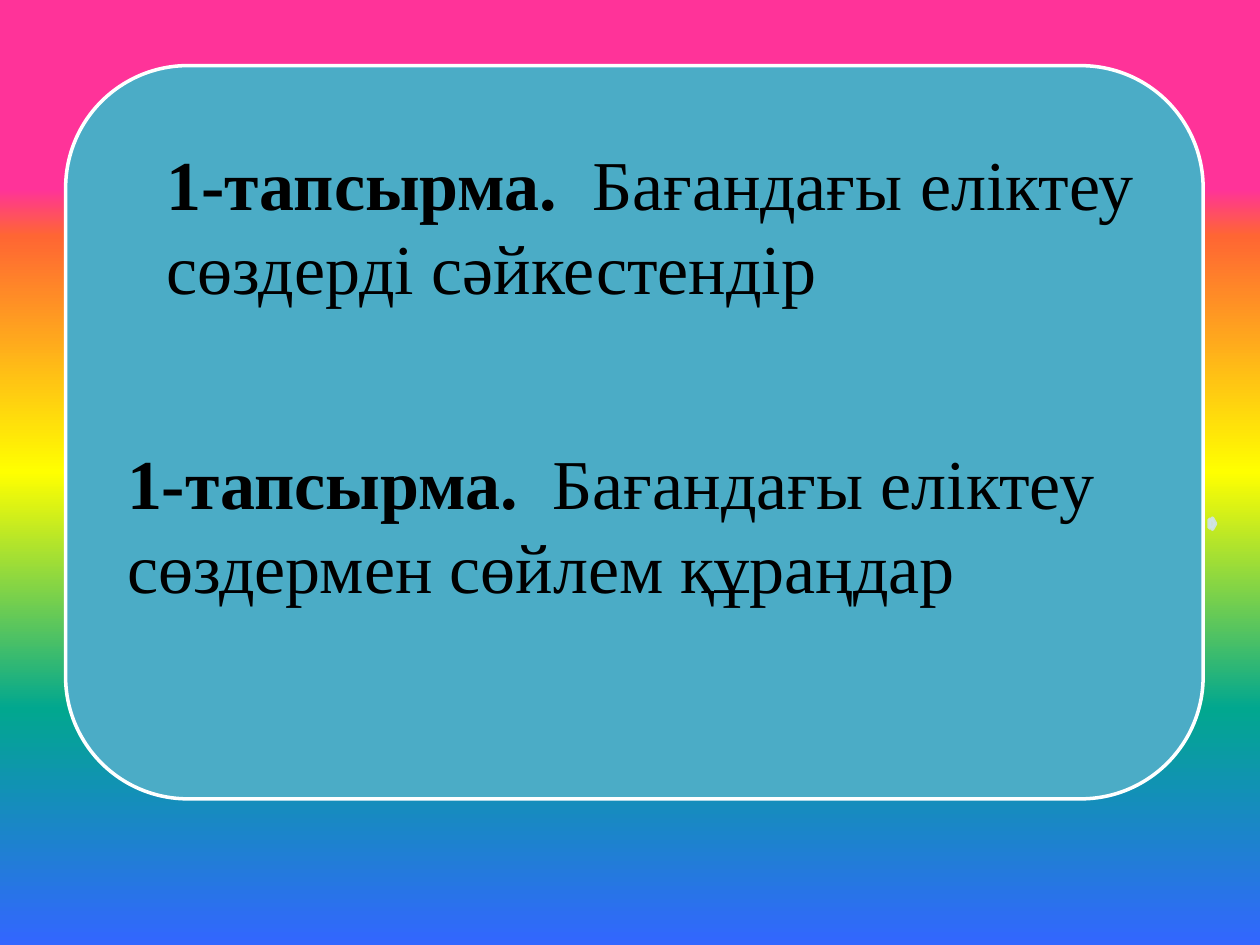
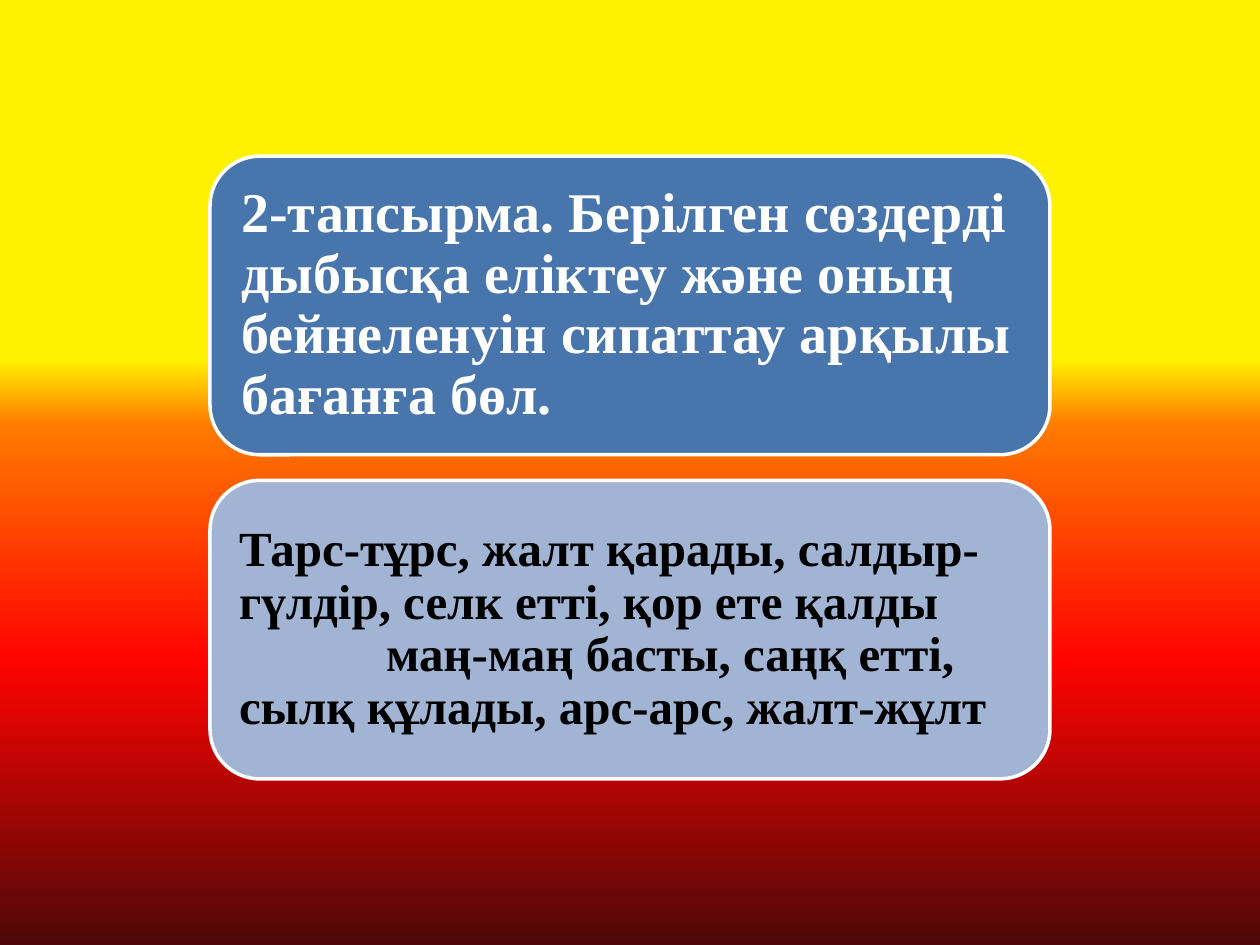
"""Builds two task slides with rounded panels on banded gradients."""
from dataclasses import dataclass

from lxml.etree import SubElement
from pptx import Presentation
from pptx.dml.color import RGBColor
from pptx.enum.shapes import MSO_SHAPE
from pptx.enum.text import MSO_ANCHOR, PP_ALIGN
from pptx.oxml.ns import qn
from pptx.slide import Slide
from pptx.util import Pt

FONT = "Times New Roman"
HUES = {
    "pink": "FF3399", "coral": "FF6633", "lemon": "FFFF00", "green": "01A78F",
    "blue": "3366FF", "gold": "FFF200", "amber": "FF7A00", "red": "FF0300",
    "wine": "4D0808", "teal": "4BACC6", "steel": "4875AC", "mist": "A2B4D4",
    "pale": "D0E3EA", "white": "FFFFFF", "black": "000000",
}


@dataclass
class Box:
    left: float
    top: float
    width: float
    height: float

    def shrink(self, gap: float) -> "Box":
        return Box(self.left + gap, self.top + gap,
                   self.width - 2 * gap, self.height - 2 * gap)

    def span(self) -> list[Pt]:
        return [Pt(side) for side in (self.left, self.top, self.width, self.height)]


@dataclass
class Run:
    text: str
    bold: bool = True
    extra: float = 0


@dataclass
class Line:
    runs: list[Run]
    indent: float = 0


@dataclass
class Style:
    size: float
    hue: str
    pad: tuple[float, float] = (7.2, 3.6)
    wrap: bool = False
    space: float = 1.0


@dataclass
class Card:
    hue: str
    style: Style
    lines: list[Line]


def color(hue: str) -> RGBColor:
    return RGBColor.from_string(HUES[hue])


def paint(slide: Slide, stops: list[tuple[int, str]]) -> None:
    slide.background.fill.gradient()
    grad = next(slide.element.iter(qn("a:gradFill")))
    for part in list(grad):
        grad.remove(part)
    bands = SubElement(grad, qn("a:gsLst"))
    for place, hue in stops:
        stop = SubElement(bands, qn("a:gs"), pos=str(place * 1000))
        SubElement(stop, qn("a:srgbClr"), val=HUES[hue])
    SubElement(grad, qn("a:lin"), ang="5400000", scaled="0")


def panel(slide: Slide, box: Box, hue: str) -> None:
    shape = slide.shapes.add_shape(MSO_SHAPE.ROUNDED_RECTANGLE, *box.span())
    shape.shadow.inherit = False
    shape.fill.solid()
    shape.fill.fore_color.rgb = color(hue)
    shape.line.color.rgb = color("white")
    shape.line.width = Pt(2)


def arrow(slide: Slide, box: Box) -> None:
    shape = slide.shapes.add_shape(MSO_SHAPE.RIGHT_ARROW, *box.span())
    shape.shadow.inherit = False
    shape.adjustments[0] = 0.75
    shape.adjustments[1] = 0.5
    shape.fill.solid()
    shape.fill.fore_color.rgb = color("pale")
    shape.line.color.rgb = color("pale")
    shape.line.width = Pt(2)
    for tint in shape.element.spPr.iter(qn("a:srgbClr")):
        SubElement(tint, qn("a:alpha"), val="90000")


def write(slide: Slide, box: Box, style: Style, lines: list[Line]) -> None:
    frame = slide.shapes.add_textbox(*box.span()).text_frame
    frame.word_wrap = style.wrap
    frame.vertical_anchor = MSO_ANCHOR.MIDDLE if style.wrap else MSO_ANCHOR.TOP
    frame.margin_left = frame.margin_right = Pt(style.pad[0])
    frame.margin_top = frame.margin_bottom = Pt(style.pad[1])
    for index, line in enumerate(lines):
        para = frame.add_paragraph() if index else frame.paragraphs[0]
        para.alignment = PP_ALIGN.LEFT
        para.line_spacing = style.space
        if line.indent:
            para.element.get_or_add_pPr().set("indent", str(Pt(line.indent))) if hasattr(para, "element") else \
                para._p.get_or_add_pPr().set("indent", str(Pt(line.indent)))
        for item in line.runs:
            run = para.add_run()
            run.text = item.text
            run.font.name = FONT
            run.font.size = Pt(style.size)
            run.font.bold = item.bold
            run.font.color.rgb = color(style.hue)
            if item.extra:
                run.font._element.set("spc", str(int(item.extra * 100)))


def match(slide: Slide) -> None:
    paint(slide, [(20, "pink"), (25, "coral"), (50, "lemon"),
                  (75, "green"), (100, "blue")])
    arrow(slide, Box(691, 296, 3.6, 6.5))
    panel(slide, Box(37.5, 37.5, 650, 419), "teal")
    style = Style(40, "black")
    tasks = [(88, 77, "сөздерді сәйкестендір"),
             (65.5, 247.5, "сөздермен сөйлем құраңдар")]
    for left, top, close in tasks:
        head = [Run("1-тапсырма."), Run(" ", extra=10),
                Run("Бағандағы еліктеу", False)]
        write(slide, Box(left, top, 583, 104.5), style,
              [Line(head), Line([Run(close, False)])])


def sort(slide: Slide) -> None:
    paint(slide, [(38, "gold"), (45, "amber"), (70, "red"), (100, "wine")])
    cards = [
        Card("steel", Style(32, "white", (9.6, 9.6), True, 0.9), [
            Line([Run("2-тапсырма. Берілген сөздерді дыбысқа еліктеу және оның "
                      "бейнеленуін сипаттау арқылы бағанға бөл.")])]),
        Card("mist", Style(28, "black", (8.4, 8.4), True, 0.9), [
            Line([Run("Тарс-тұрс, жалт қарады, салдыр-гүлдір, селк етті, "
                      "қор ете қалды")]),
            Line([Run("маң-маң басты, саңқ етті, сылқ құлады, арс-арс, "
                      "жалт-жұлт")], 84)]),
    ]
    for index, card in enumerate(cards):
        box = Box(120, 89.3 + 185.2 * index, 480, 170.6)
        panel(slide, box, card.hue)
        write(slide, box.shrink(8.2), card.style, card.lines)


def main() -> None:
    deck = Presentation()
    deck.slide_width, deck.slide_height = Pt(720), Pt(540)
    for draw in (match, sort):
        draw(deck.slides.add_slide(deck.slide_layouts[6]))
    deck.save("out.pptx")


if __name__ == "__main__":
    main()
